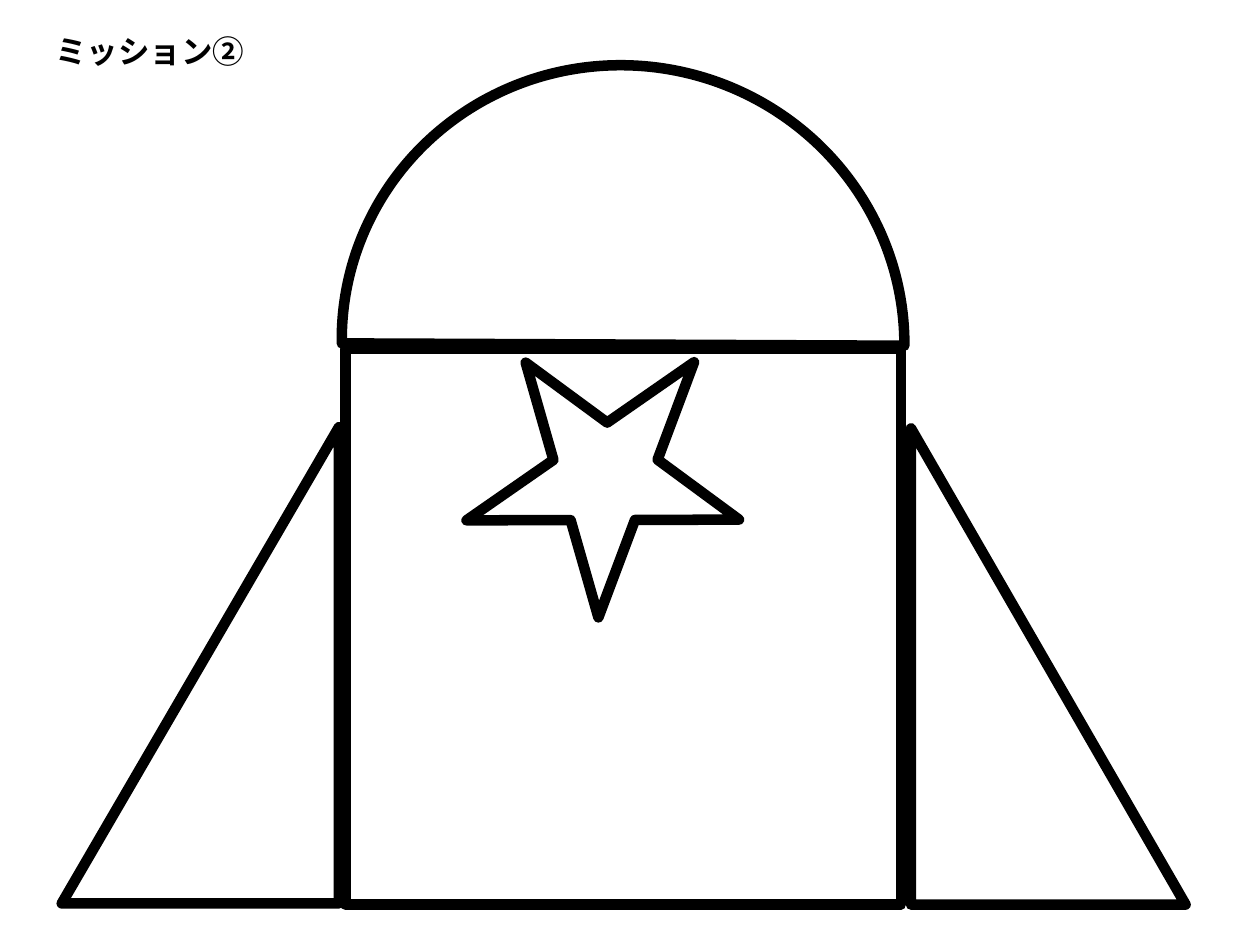
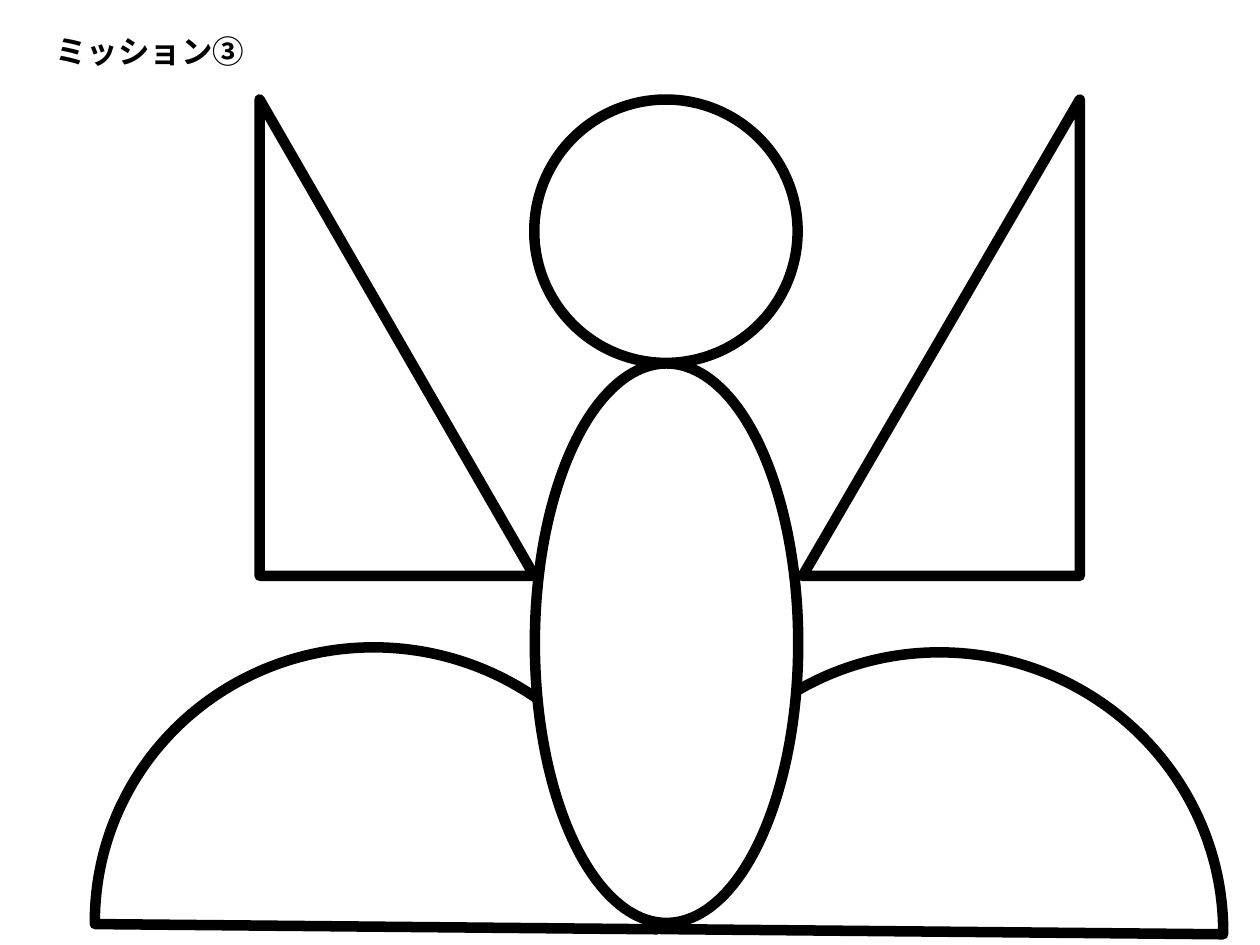
from lxml import etree
from pptx import Presentation
from pptx import util as u
from pptx.dml.color import RGBColor
from pptx.enum import shapes, text
from pptx.oxml.ns import qn

BLACK = RGBColor(0x00, 0x00, 0x00)
WHITE = RGBColor(0xFF, 0xFF, 0xFF)
FONT = "Noto Sans CJK JP"
OUTLINE = u.Pt(6)
TITLE_BOX = (0.34, 0.2, 1.72, 0.71)
DOME_SIZE = (4.39, 4.47)
DOME_ENDS = (45.38, 153.98)
FIN_LENGTH = 3.78
HEAD_SIZE = 2.09
BODY_SIZE = 4.41
TITLE_ONLY = 5
Kind = shapes.MSO_SHAPE


class MissionDeck:
    def __init__(self):
        self.deck = Presentation()
        self.deck.slide_width = u.Inches(10)
        self.deck.slide_height = u.Inches(7.5)
        self.slide = None

    def mission(self, heading):
        self.slide = self.deck.slides.add_slide(self.deck.slide_layouts[TITLE_ONLY])
        title = self.slide.shapes.title
        title.left, title.top, title.width, title.height = map(u.Inches, TITLE_BOX)
        frame = title.text_frame
        frame.text = heading
        frame.word_wrap = False
        frame.auto_size = text.MSO_AUTO_SIZE.NONE
        frame.vertical_anchor = text.MSO_ANCHOR.TOP
        paragraph = frame.paragraphs[0]
        paragraph.alignment = text.PP_ALIGN.LEFT
        font = paragraph.runs[0].font
        font.name, font.size, font.bold = FONT, u.Pt(18), True
        font.color.rgb = BLACK
        east_asian = etree.SubElement(font._element, qn("a:ea"))
        east_asian.set("typeface", FONT)

    def outline(self, kind, left, top, width, height, rotation=0):
        piece = self.slide.shapes.add_shape(
            kind, *map(u.Inches, (left, top, width, height)))
        piece.rotation = rotation
        piece.shadow.inherit = False
        piece.fill.solid()
        piece.fill.fore_color.rgb = WHITE
        piece.line.color.rgb = BLACK
        piece.line.width = OUTLINE
        return piece

    def dome(self, left, top, rotation):
        piece = self.outline(Kind.CHORD, left, top, *DOME_SIZE, rotation)
        for index, end in enumerate(DOME_ENDS):
            piece.adjustments[index] = end

    def fin(self, left, top, width, mirrored=False):
        piece = self.outline(Kind.RIGHT_TRIANGLE, left, top, FIN_LENGTH, width, 270)
        if mirrored:
            piece.element.spPr.xfrm.set("flipV", "1")

    def save(self):
        self.deck.save("out.pptx")


def rocket(deck):
    deck.mission("ミッション②")
    deck.dome(2.75, 0.48, 104.1)
    deck.outline(Kind.RECTANGLE, 2.74, 2.77, BODY_SIZE, BODY_SIZE)
    deck.fin(-0.3, 4.18, 2.2)
    deck.fin(6.43, 4.2, 2.18, mirrored=True)
    deck.outline(Kind.STAR_5_POINT, 3.64, 2.7, 2.2, 1.99, 325.2)


def winged_figure(deck):
    deck.mission("ミッション③")
    deck.dome(5.28, 5.14, 104.4)
    deck.fin(5.58, 1.58, 2.2)
    deck.dome(0.79, 5.1, 104.4)
    deck.outline(Kind.OVAL, 3.07, 4.06, 4.44, HEAD_SIZE, 270)
    deck.outline(Kind.OVAL, 4.24, 0.79, HEAD_SIZE, HEAD_SIZE)
    deck.fin(1.26, 1.59, 2.18, mirrored=True)


def main():
    deck = MissionDeck()
    rocket(deck)
    winged_figure(deck)
    deck.save()


if __name__ == "__main__":
    main()
